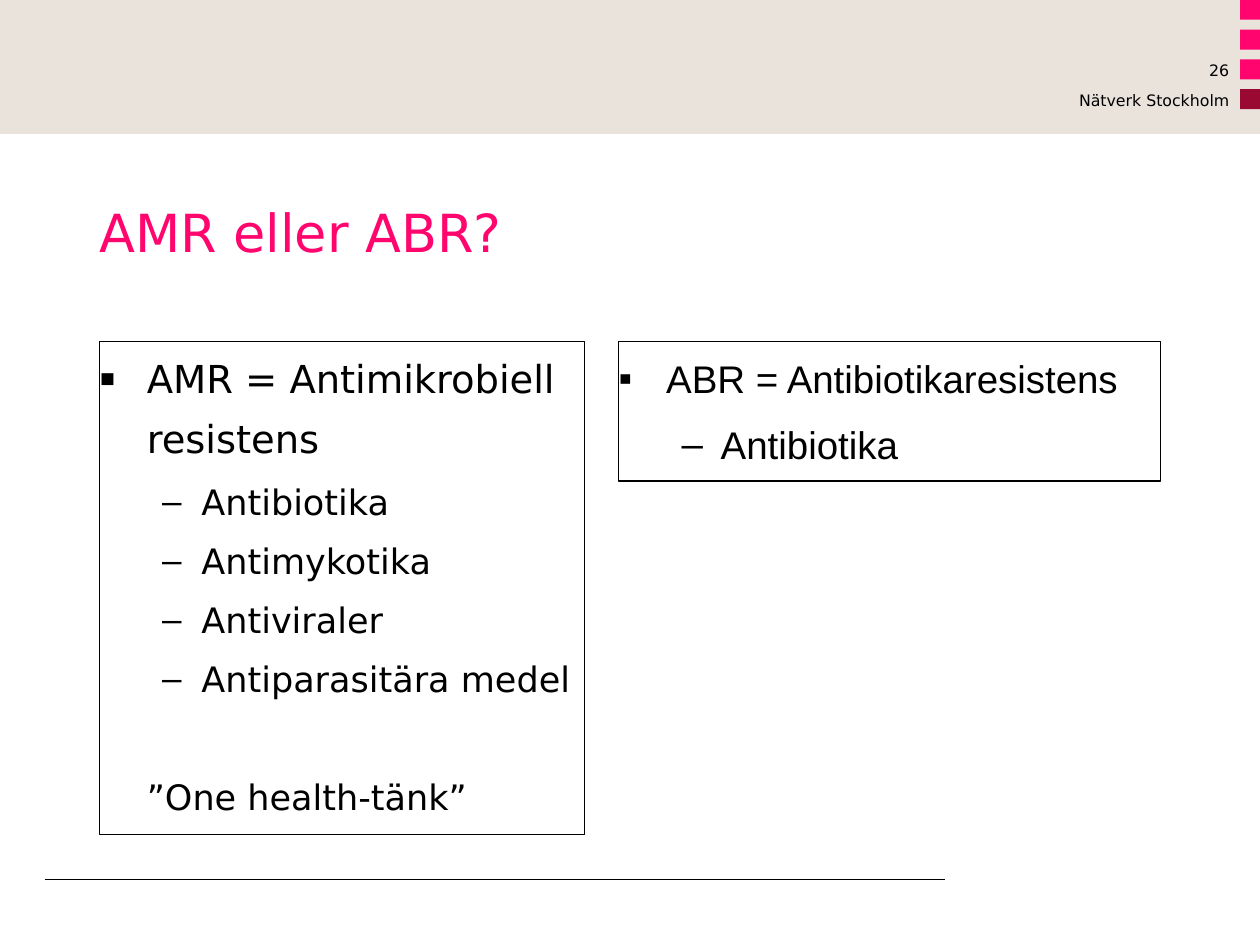
from dataclasses import dataclass

from lxml import etree
from pptx import Presentation
from pptx.dml.color import RGBColor
from pptx.enum.shapes import MSO_CONNECTOR, MSO_SHAPE
from pptx.enum.text import MSO_ANCHOR, MSO_AUTO_SIZE, PP_ALIGN
from pptx.oxml.ns import qn
from pptx.util import Cm, Pt

RECT = MSO_SHAPE.RECTANGLE
STRAIGHT = MSO_CONNECTOR.STRAIGHT
TOP, BOTTOM = MSO_ANCHOR.TOP, MSO_ANCHOR.BOTTOM
LEFT, RIGHT = PP_ALIGN.LEFT, PP_ALIGN.RIGHT
NO_FIT = MSO_AUTO_SIZE.NONE

SANS, ARIAL = "DejaVu Sans", "Arial"
PINK, WINE, SAND, BLACK = "FF056D", "9A0932", "E9E3DC", "000000"


@dataclass
class Box:
    left: float
    top: float
    width: float
    height: float


@dataclass
class Item:
    text: str
    size: float
    level: int = 1
    bullet: str = "–"
    bullet_size: int = 100
    before: float = 4


def rgb(value: str) -> RGBColor:
    return RGBColor.from_string(value)


def place(sp, box: Box) -> None:
    sp.left, sp.top = Cm(box.left), Cm(box.top)
    sp.width, sp.height = Cm(box.width), Cm(box.height)


def prepare_frame(sp, anchor=TOP):
    """Give the shape a wrapping text frame without margins."""
    tf = sp.text_frame
    tf.word_wrap = True
    tf.auto_size = NO_FIT
    tf.vertical_anchor = anchor
    tf.margin_left = tf.margin_right = tf.margin_top = tf.margin_bottom = 0
    return tf


def add_run(p, text: str, size: float, font: str, color: str = BLACK) -> None:
    r = p.add_run()
    r.text = text
    r.font.size = Pt(size)
    r.font.name = font
    r.font.color.rgb = rgb(color)


def set_bullet(p, item: Item) -> None:
    """Set indents and bullet; an item without one starts at the outer indent."""
    pPr = p._p.get_or_add_pPr()
    if item.bullet:
        margin, hanging = ((0.96, 0.96), (2.06, 0.79))[item.level]
    else:
        margin, hanging = 0.96, 0
    pPr.set("marL", str(Cm(margin)))
    pPr.set("indent", str(-Cm(hanging)))
    if not item.bullet:
        etree.SubElement(pPr, qn("a:buNone"))
        return
    etree.SubElement(pPr, qn("a:buSzPct"), val=str(item.bullet_size * 1000))
    etree.SubElement(pPr, qn("a:buFont"), typeface=ARIAL)
    etree.SubElement(pPr, qn("a:buChar"), char=item.bullet)


def fill_list(sp, box: Box, items: list[Item], font: str) -> None:
    place(sp, box)
    sp.line.color.rgb = rgb(BLACK)
    sp.line.width = Pt(0.75)
    tf = prepare_frame(sp)
    for i, item in enumerate(items):
        p = tf.add_paragraph() if i else tf.paragraphs[0]
        p.level = item.level
        p.alignment = LEFT
        p.line_spacing = 1.2 if item.level else 1.3
        p.space_before = Pt(item.before)
        p.space_after = Pt(1 if item.level else 2)
        set_bullet(p, item)
        add_run(p, item.text, item.size, font)


def add_block(s, box: Box, color: str) -> None:
    sp = s.shapes.add_shape(RECT, 0, 0, 0, 0)
    place(sp, box)
    sp.shadow.inherit = False
    sp.fill.solid()
    sp.fill.fore_color.rgb = rgb(color)
    sp.line.fill.background()


def add_rule(s, x1: float, x2: float, y: float) -> None:
    line = s.shapes.add_connector(STRAIGHT, Cm(x1), Cm(y), Cm(x2), Cm(y))
    line.line.color.rgb = rgb(BLACK)
    line.line.width = Pt(1)
    etree.SubElement(line._element.spPr, qn("a:effectLst"))


def add_header_text(s, text: str, top: float) -> None:
    sp = s.shapes.add_textbox(Cm(17.78), Cm(top), Cm(7), Cm(0.36))
    p = prepare_frame(sp).paragraphs[0]
    p.alignment = RIGHT
    add_run(p, text, 9, SANS)


def main() -> None:
    prs = Presentation()
    prs.slide_width, prs.slide_height = Cm(25.4), Cm(19.05)
    s = prs.slides.add_slide(prs.slide_layouts[1])

    add_block(s, Box(0, 0, 25.4, 2.7), SAND)
    for i, color in enumerate((PINK, PINK, PINK, WINE)):
        add_block(s, Box(25, 0.6 * i, 0.4, 0.4), color)
    add_rule(s, 0.91, 19.06, 17.73)

    title = s.shapes.title
    place(title, Box(2, 3, 21.4, 2.3))
    p = prepare_frame(title, BOTTOM).paragraphs[0]
    p.alignment = LEFT
    add_run(p, "AMR eller ABR?", 30, SANS, PINK)

    amr_items = [Item("AMR = Antimikrobiell resistens", 22, 0, "▪", 124, 5)]
    for agent in ("Antibiotika", "Antimykotika", "Antiviraler", "Antiparasitära medel"):
        amr_items.append(Item(agent, 20))
    amr_items.append(Item("”One health-tänk”", 20, bullet="", before=37.5))
    fill_list(s.placeholders[1], Box(2, 6.88, 9.78, 9.94), amr_items, SANS)

    add_header_text(s, "Nätverk Stockholm", 1.83)
    add_header_text(s, "26", 1.22)

    abr_items = [
        Item("ABR = Antibiotikaresistens", 22, 0, "▪", before=5),
        Item("Antibiotika", 22),
    ]
    abr_box = s.shapes.add_textbox(0, 0, 0, 0)
    fill_list(abr_box, Box(12.47, 6.88, 10.93, 2.82), abr_items, ARIAL)

    prs.save("out.pptx")


if __name__ == "__main__":
    main()
